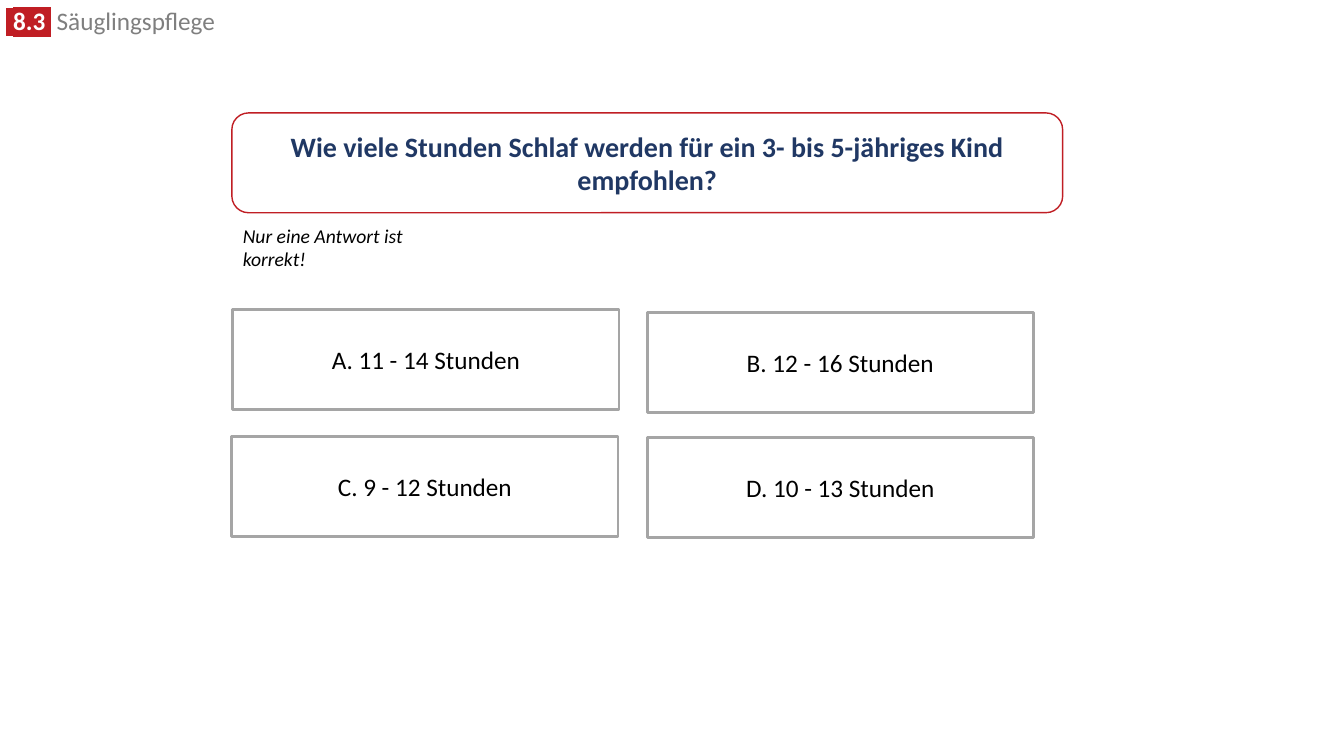
from pptx import Presentation
from pptx.dml.color import RGBColor
from pptx.enum.shapes import MSO_SHAPE as SHAPE
from pptx.enum.text import MSO_ANCHOR as ANCHOR, MSO_AUTO_SIZE as AUTO, PP_ALIGN as ALIGN
from pptx.oxml import parse_xml
from pptx.util import Inches, Pt

RED, NAVY, BLACK, WHITE = "C01E24", "203864", "000000", "FFFFFF"
GREY, BORDER = "7F7F7F", "A5A5A5"
NS = "http://schemas.openxmlformats.org/drawingml/2006/main"

QUESTION = "Wie viele Stunden Schlaf werden für ein 3- bis 5-jähriges Kind empfohlen?"
HINT = "Nur eine Antwort ist korrekt!"
# Answer text with its offset from the top left of the answer area
ANSWERS = [
    ("A. 11 - 14 Stunden", 0.01, 0),
    ("B. 12 - 16 Stunden", 4.12, 0.03),
    ("C. 9 - 12 Stunden", 0, 1.26),
    ("D. 10 - 13 Stunden", 4.12, 1.27),
]


def rgb(color):
    return RGBColor.from_string(color)


def add_run(p, text, color, highlight=None, **fmt):
    r = p.add_run()
    r.text = text
    for name, value in ({"name": "Calibri"} | fmt).items():
        setattr(r.font, name, value)
    r.font.color.rgb = rgb(color)
    if highlight:
        mark = f'<a:highlight xmlns:a="{NS}"><a:srgbClr val="{highlight}"/></a:highlight>'
        r.font.fill._xPr.find(f"{{{NS}}}latin").addprevious(parse_xml(mark))


def add_panel(slide, kind, box, line, width, text, color, **fmt):
    sp = slide.shapes.add_shape(kind, *map(Inches, box))
    sp.shadow.inherit = False
    sp.fill.solid()
    sp.fill.fore_color.rgb = rgb(WHITE)
    sp.line.color.rgb = rgb(line)
    sp.line.width = Pt(width)
    tf = sp.text_frame
    tf.word_wrap = True
    tf.vertical_anchor = ANCHOR.MIDDLE
    p = tf.paragraphs[0]
    p.alignment = ALIGN.CENTER
    add_run(p, text, color, **fmt)


def add_header(slide, box):
    sp = slide.shapes.title
    sp.left, sp.top, sp.width, sp.height = map(Inches, box)
    tf = sp.text_frame
    for name, value in {"word_wrap": True, "auto_size": AUTO.NONE,
                        "vertical_anchor": ANCHOR.TOP}.items():
        setattr(tf, name, value)
    p = tf.paragraphs[0]
    p.alignment = ALIGN.LEFT
    p.line_spacing = 0.8
    size = Pt(18)
    add_run(p, " ", WHITE, RED, name="Arial", size=size, bold=True)
    add_run(p, "8.3 ", WHITE, RED, size=size, bold=True)
    add_run(p, " Säuglingspflege", GREY, size=size, bold=False)


def add_question(slide, box):
    left, top, width, height = box
    add_panel(slide, SHAPE.ROUNDED_RECTANGLE, box, RED, 1, QUESTION, NAVY,
              size=Pt(20), bold=True)
    # Hint below the question
    hint = slide.shapes.add_textbox(Inches(left + 0.01), Inches(top + height + 0.06),
                                    Inches(2.36), Inches(0.57))
    tf = hint.text_frame
    tf.word_wrap = True
    add_run(tf.paragraphs[0], HINT, BLACK, size=Pt(14), italic=True)


def add_answers(slide, left, top, width, height):
    for text, dx, dy in ANSWERS:
        add_panel(slide, SHAPE.RECTANGLE, (left + dx, top + dy, width, height),
                  BORDER, 2, text, BLACK, size=Pt(18))


def main():
    prs = Presentation()
    prs.slide_width, prs.slide_height = Inches(13.33), Inches(7.5)
    slide = prs.slides.add_slide(prs.slide_layouts[5])
    add_header(slide, (-0.04, 0.06, 2.76, 0.34))
    add_question(slide, (2.3, 1.12, 8.24, 0.99))
    add_answers(slide, 2.3, 3.07, 3.83, 0.99)
    prs.save("out.pptx")


if __name__ == "__main__":
    main()
